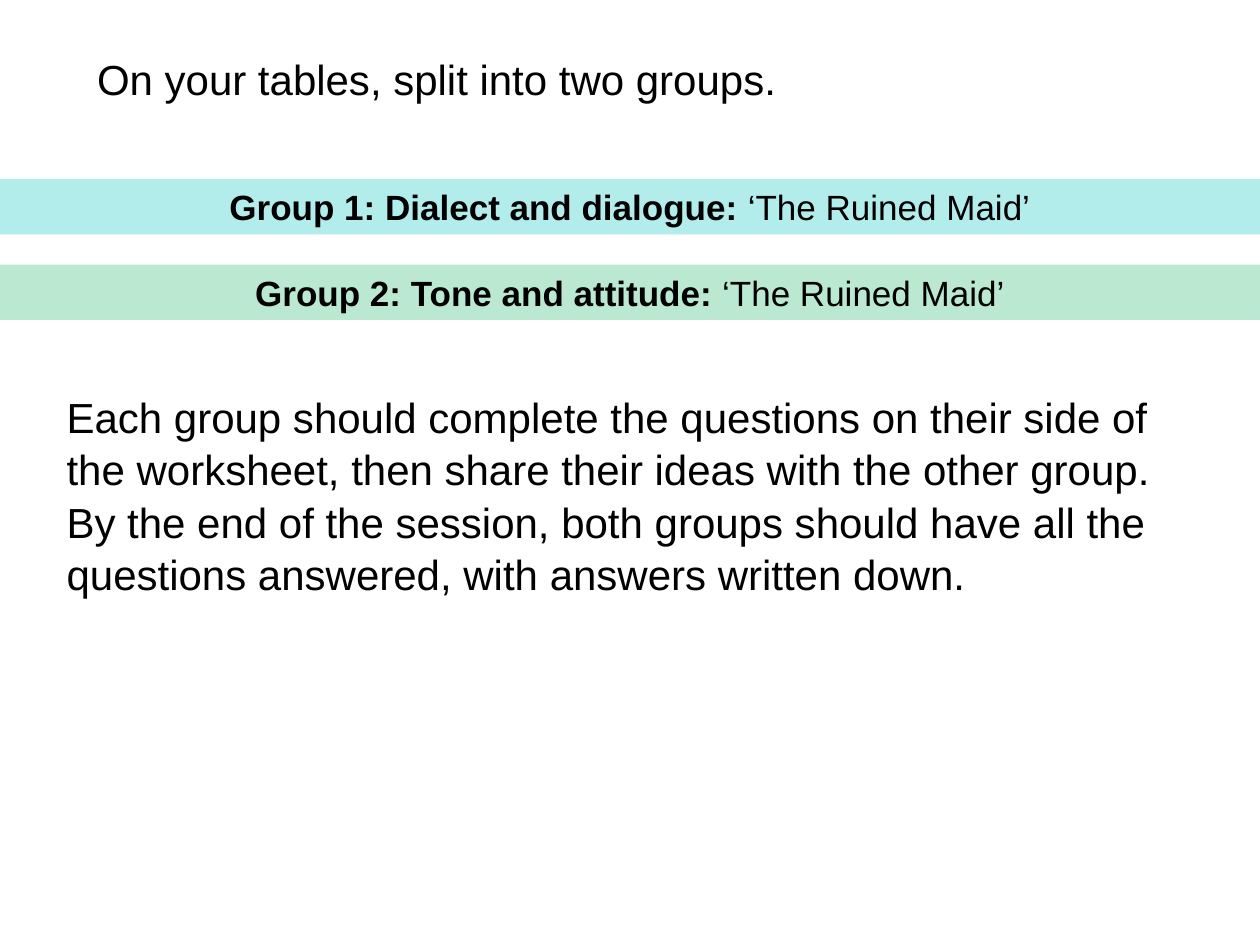
from dataclasses import dataclass

from pptx import Presentation
from pptx.dml.color import RGBColor
from pptx.enum.shapes import MSO_SHAPE
from pptx.enum.text import MSO_ANCHOR, MSO_AUTO_SIZE, PP_ALIGN
from pptx.util import Inches, Pt

RECT = MSO_SHAPE.RECTANGLE
TOP, MIDDLE = MSO_ANCHOR.TOP, MSO_ANCHOR.MIDDLE
LEFT, CENTER = PP_ALIGN.LEFT, PP_ALIGN.CENTER
NONE = MSO_AUTO_SIZE.NONE

WIDE, HIGH = 10, 7.5
BAR_TOP, BAR_HIGH, BAR_STEP = 1.42, 0.44, 0.68
HUES = {"ink": "000000", "aqua": "B2EDEC", "mint": "BAE8D1"}
POEM = "‘The Ruined Maid’"
TASK = (
    "Each group should complete the questions on their side of the worksheet, "
    "then share their ideas with the other group. By the end of the session, "
    "both groups should have all the questions answered, with answers written down."
)


@dataclass
class Group:
    """A group's topic and the hue of its bar."""

    topic: str
    hue: str


GROUPS = [
    Group("Group 1: Dialect and dialogue: ", "aqua"),
    Group("Group 2: Tone and attitude: ", "mint"),
]


def assign(item, values: dict) -> None:
    """Set each named attribute of an item."""
    for name, value in values.items():
        setattr(item, name, value)


def place(shape, left: float, top: float, width: float, height: float) -> None:
    """Move and size a shape in inches."""
    names = ("left", "top", "width", "height")
    sizes = map(Inches, (left, top, width, height))
    assign(shape, dict(zip(names, sizes)))


def write(shape, parts: list, size: int, align, anchor, space: float = 1.0) -> None:
    """Fill a shape with one paragraph of (text, bold) parts."""
    frame = shape.text_frame
    assign(frame, {"word_wrap": True, "auto_size": NONE, "vertical_anchor": anchor})
    para = frame.paragraphs[0]
    assign(para, {"alignment": align, "line_spacing": space})
    for text, bold in parts:
        run = para.add_run()
        run.text = text
        assign(run.font, {"name": "Arial", "size": Pt(size), "bold": bold})
        run.font.color.rgb = RGBColor.from_string(HUES["ink"])


def draw_bar(slide, group: Group, row: int) -> None:
    """Draw one full-width group bar."""
    top = BAR_TOP + row * BAR_STEP
    bar = slide.shapes.add_shape(RECT, 0, 0, 0, 0)
    place(bar, 0, top, WIDE, BAR_HIGH)
    bar.shadow.inherit = False
    bar.fill.solid()
    bar.fill.fore_color.rgb = RGBColor.from_string(HUES[group.hue])
    bar.line.fill.background()
    write(bar, [(group.topic, True), (POEM, False)], 20, CENTER, MIDDLE)


def main() -> None:
    """Build and save the slide."""
    deck = Presentation()
    assign(deck, {"slide_width": Inches(WIDE), "slide_height": Inches(HIGH)})
    slide = deck.slides.add_slide(deck.slide_layouts[5])
    title = slide.shapes.title
    place(title, 0.67, 0.36, 8.82, 0.5)
    write(title, [("On your tables, split into two groups.", False)], 24, LEFT, TOP, 1.04)
    for row, group in enumerate(GROUPS):
        draw_bar(slide, group, row)
    task = slide.shapes.add_textbox(0, 0, 0, 0)
    place(task, 0.43, 3.04, 8.82, 1.72)
    write(task, [(TASK, False)], 24, LEFT, TOP, 1.04)
    deck.save("out.pptx")


if __name__ == "__main__":
    main()
